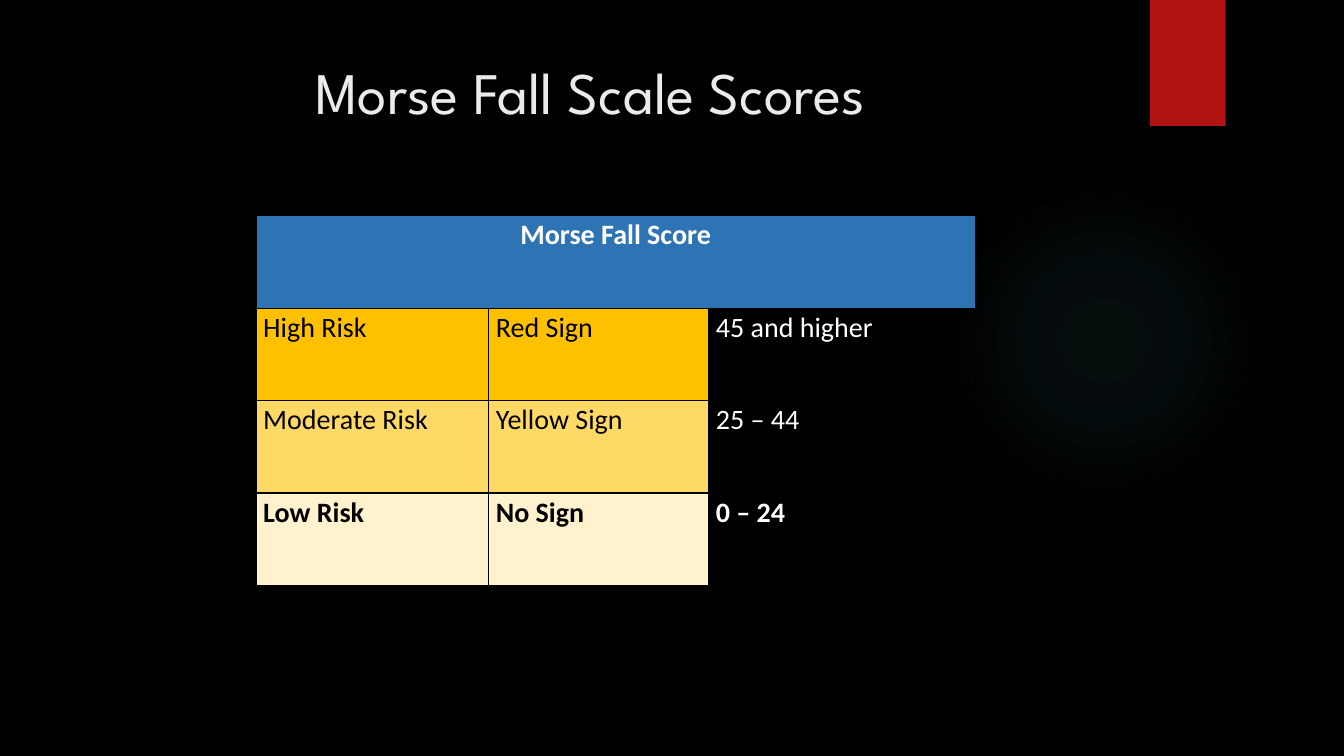
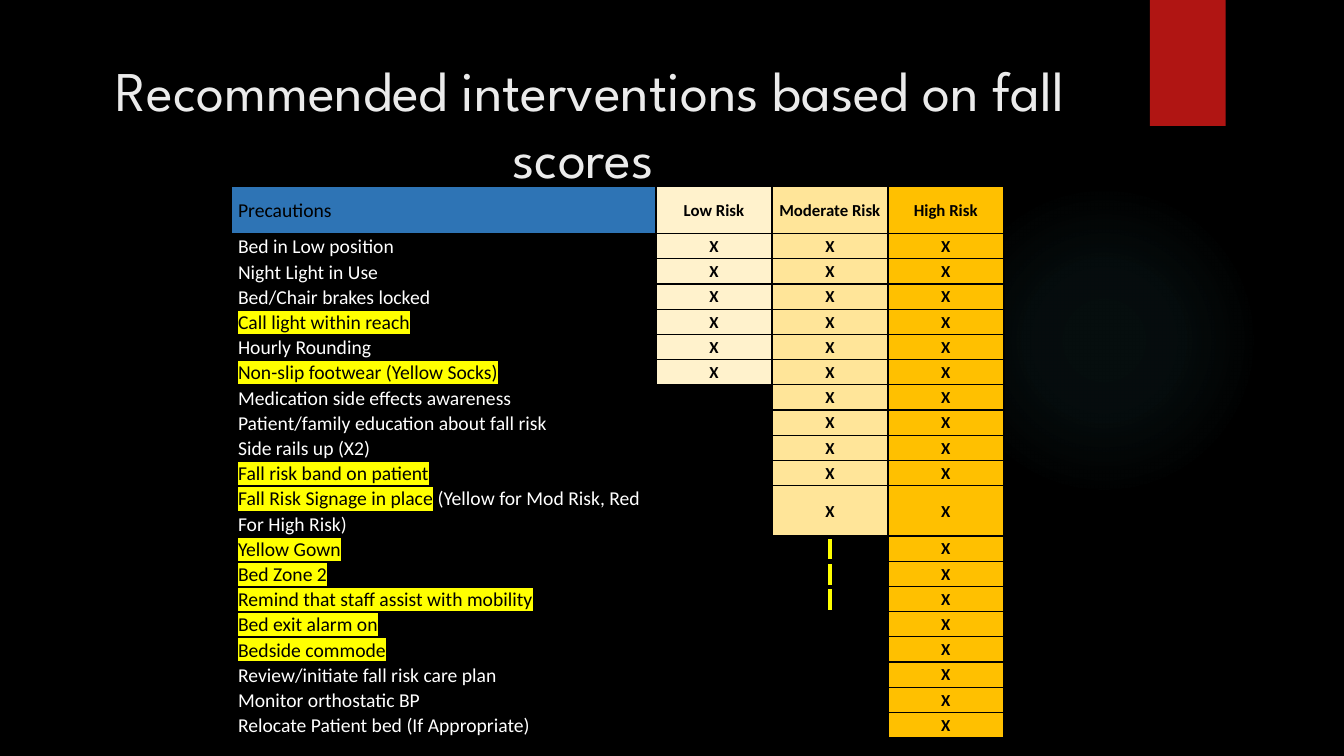
from dataclasses import dataclass
from lxml.etree import SubElement
from pptx import Presentation
from pptx.dml.color import RGBColor
from pptx.enum.shapes import MSO_SHAPE
from pptx.enum.text import MSO_ANCHOR, PP_ALIGN
from pptx.oxml import parse_xml
from pptx.oxml.ns import nsdecls, qn
from pptx.util import Emu, Inches, Pt

COLS, ROWS = 160, 90


@dataclass(frozen=True)
class Theme:
    black: str = "000000"
    white: str = "FFFFFF"
    title: str = "EBEBEB"
    red: str = "B01513"
    glow: str = "50B9C1"
    blue: str = "2E74B5"
    low: str = "FFF2CC"
    moderate: str = "FFE599"
    moderate_strong: str = "FFD966"
    high: str = "FFC000"
    marker: str = "FFFF00"
    title_font: str = "League Spartan"
    body_font: str = "Calibri"
    score_size: int = 20
    item_size: int = 14
    mark_size: int = 12
    line_spacing: float = 1.07


THEME = Theme()


def rgb(value):
    return RGBColor.from_string(value)


def write(tf, text, *, size, color, font=THEME.body_font, bold=False,
          align=PP_ALIGN.LEFT, spacing=None, highlight=None):
    p = tf.paragraphs[0]
    p.alignment = align
    if spacing:
        p.line_spacing = spacing
    if not text:
        SubElement(p._p, qn("a:endParaRPr"), sz=str(size * 100))
        return
    r = p.add_run()
    r.text = text
    r.font.size = Pt(size)
    r.font.bold = bold
    r.font.color.rgb = rgb(color)
    if highlight:
        mark = SubElement(r.font._element, qn("a:highlight"))
        SubElement(mark, qn("a:srgbClr"), val=highlight)
    r.font.name = font


class Deck:
    def __init__(self, theme):
        self.theme = theme
        self.prs = Presentation()
        self.prs.slide_width = Inches(13.33)
        self.prs.slide_height = Inches(7.5)
        self.s = None

    def x(self, cols):
        return Emu(round(self.prs.slide_width * cols / COLS))

    def y(self, rows):
        return Emu(round(self.prs.slide_height * rows / ROWS))

    def box(self, left, top, width, height):
        return self.x(left), self.y(top), self.x(width), self.y(height)

    def shape(self, kind, *box):
        sp = self.s.shapes.add_shape(kind, *self.box(*box))
        sp.shadow.inherit = False
        sp.line.fill.background()
        return sp

    def glow(self, *box):
        sp = self.shape(MSO_SHAPE.OVAL, *box)
        stops = "".join(
            f'<a:gs pos="{pos}000"><a:srgbClr val="{self.theme.glow}">'
            f'<a:alpha val="{alpha}000"/></a:srgbClr></a:gs>'
            for pos, alpha in ((0, 7), (36, 6), (69, 0)))
        sp._element.spPr.find(qn("a:prstGeom")).addnext(parse_xml(
            f'<a:gradFill {nsdecls("a")}><a:gsLst>{stops}</a:gsLst>'
            '<a:path path="circle"><a:fillToRect l="50000" t="50000" '
            'r="50000" b="50000"/></a:path></a:gradFill>'))

    def ribbon(self, *box):
        sp = self.shape(MSO_SHAPE.RECTANGLE, *box)
        sp.fill.solid()
        sp.fill.fore_color.rgb = rgb(self.theme.red)

    def slide(self, title, size, height):
        self.s = self.prs.slides.add_slide(self.prs.slide_layouts[6])
        fill = self.s.background.fill
        fill.solid()
        fill.fore_color.rgb = rgb(self.theme.black)
        self.glow(112.9, 22, 37, 37)
        self.ribbon(136.9, 0, 9, 15)
        tf = self.s.shapes.add_textbox(*self.box(8.5, 6, 123.5, height)).text_frame
        tf.word_wrap = True
        write(tf, title, size=size, color=self.theme.title,
              font=self.theme.title_font, align=PP_ALIGN.CENTER)

    def table(self, left, top, widths, heights):
        frame = self.s.shapes.add_table(
            len(heights), len(widths),
            *self.box(left, top, sum(widths), sum(heights)))
        table = frame.table
        table.first_row = table.horz_banding = False
        for column, width in zip(table.columns, widths):
            column.width = self.x(width)
        for row, height in zip(table.rows, heights):
            row.height = self.y(height)
        return table

    def cell(self, cell, text="", *, fill=None, sides=1, edges=1,
             anchor=MSO_ANCHOR.TOP, **style):
        cell.margin_left = cell.margin_right = Inches(0.07)
        cell.margin_top = cell.margin_bottom = 0
        cell.vertical_anchor = anchor
        tc_pr = cell._tc.get_or_add_tcPr()
        for side, width in zip("LRTB", (sides, sides, edges, edges)):
            ln = SubElement(tc_pr, qn(f"a:ln{side}"), w=str(Pt(width)))
            solid = SubElement(ln, qn("a:solidFill"))
            SubElement(solid, qn("a:srgbClr"), val=self.theme.black)
        if fill:
            cell.fill.solid()
            cell.fill.fore_color.rgb = rgb(fill)
        else:
            cell.fill.background()
        write(cell.text_frame, text, spacing=self.theme.line_spacing, **style)


SCORES = [
    ("High Risk", "Red Sign", "45 and higher", THEME.high),
    ("Moderate Risk", "Yellow Sign", "25 – 44", THEME.moderate_strong),
    ("Low Risk", "No Sign", "0 – 24", THEME.low),
]
ALL, MODERATE, FLAGGED, HIGH = "XXX", "-XX", "-|X", "--X"
RISKS = [("Low Risk", THEME.low), ("Moderate Risk", THEME.moderate),
         ("High Risk", THEME.high)]
PRECAUTIONS = [
    ("", "Bed in Low position", ALL),
    ("", "Night Light in Use", ALL),
    ("", "Bed/Chair brakes locked", ALL),
    ("Call light within reach", "", ALL),
    ("", "Hourly Rounding", ALL),
    ("Non-slip footwear (Yellow Socks)", "", ALL),
    ("", "Medication side effects awareness", MODERATE),
    ("", "Patient/family education about fall risk", MODERATE),
    ("", "Side rails up (X2)", MODERATE),
    ("Fall risk band on patient", "", MODERATE),
    ("Fall Risk Signage in place",
     " (Yellow for Mod Risk, Red For High Risk)", MODERATE),
    ("Yellow Gown", "", FLAGGED),
    ("Bed Zone 2", "", FLAGGED),
    ("Remind that staff assist with mobility", "", FLAGGED),
    ("Bed exit alarm on", "", HIGH),
    ("Bedside commode", "", HIGH),
    ("", "Review/initiate fall risk care plan", HIGH),
    ("", "Monitor orthostatic BP", HIGH),
    ("", "Relocate Patient bed (If Appropriate)", HIGH),
]


def scores_slide(deck):
    t = deck.theme
    deck.slide("Morse Fall Scale Scores", 42, 18.4)
    table = deck.table(30.5, 25.7, (27.7, 26.2, 31.7), [11] * 4)
    for col, text in enumerate(("Morse Fall Score", "", "")):
        deck.cell(table.cell(0, col), text, fill=t.blue, size=t.score_size,
                  color=t.white, bold=True, align=PP_ALIGN.CENTER)
    table.cell(0, 0).merge(table.cell(0, 2))
    for row, (*texts, fill) in enumerate(SCORES, 1):
        looks = ((fill, t.black), (fill, t.black), (None, t.white))
        for col, (text, (back, color)) in enumerate(zip(texts, looks)):
            deck.cell(table.cell(row, col), text, fill=back, color=color,
                      size=t.score_size, bold=row == len(SCORES))


def interventions_slide(deck):
    t = deck.theme
    deck.slide("Recommended interventions based on fall scores ", 40, 16.2)
    heights = [6 if marked and plain else 3 for marked, plain, _ in PRECAUTIONS]
    table = deck.table(27.5, 22.2, (50.6, 13.8, 13.8, 13.8), [5.6] + heights)
    item = dict(size=t.item_size, sides=1.5)
    mark = dict(size=t.mark_size, sides=1.5, color=t.black, bold=True,
                align=PP_ALIGN.CENTER, anchor=MSO_ANCHOR.MIDDLE)
    deck.cell(table.cell(0, 0), "Precautions", fill=t.blue, color=t.black,
              edges=1.5, anchor=MSO_ANCHOR.MIDDLE, **item)
    for col, (risk, fill) in enumerate(RISKS, 1):
        deck.cell(table.cell(0, col), risk, fill=fill, edges=1.5, **mark)
    for row, (marked, plain, marks) in enumerate(PRECAUTIONS, 1):
        name = table.cell(row, 0)
        deck.cell(name, marked or plain, color=t.black if marked else t.white,
                  highlight=t.marker if marked else None, **item)
        if marked and plain:
            write(name.text_frame, plain, size=t.item_size, color=t.white)
        for col, (sign, (_, fill)) in enumerate(zip(marks, RISKS), 1):
            text = {"X": "X", "|": " ", "-": ""}[sign]
            deck.cell(table.cell(row, col), text,
                      fill=fill if sign == "X" else None,
                      highlight=t.marker if sign == "|" else None, **mark)


def main():
    deck = Deck(THEME)
    scores_slide(deck)
    interventions_slide(deck)
    deck.prs.save("out.pptx")


if __name__ == "__main__":
    main()
